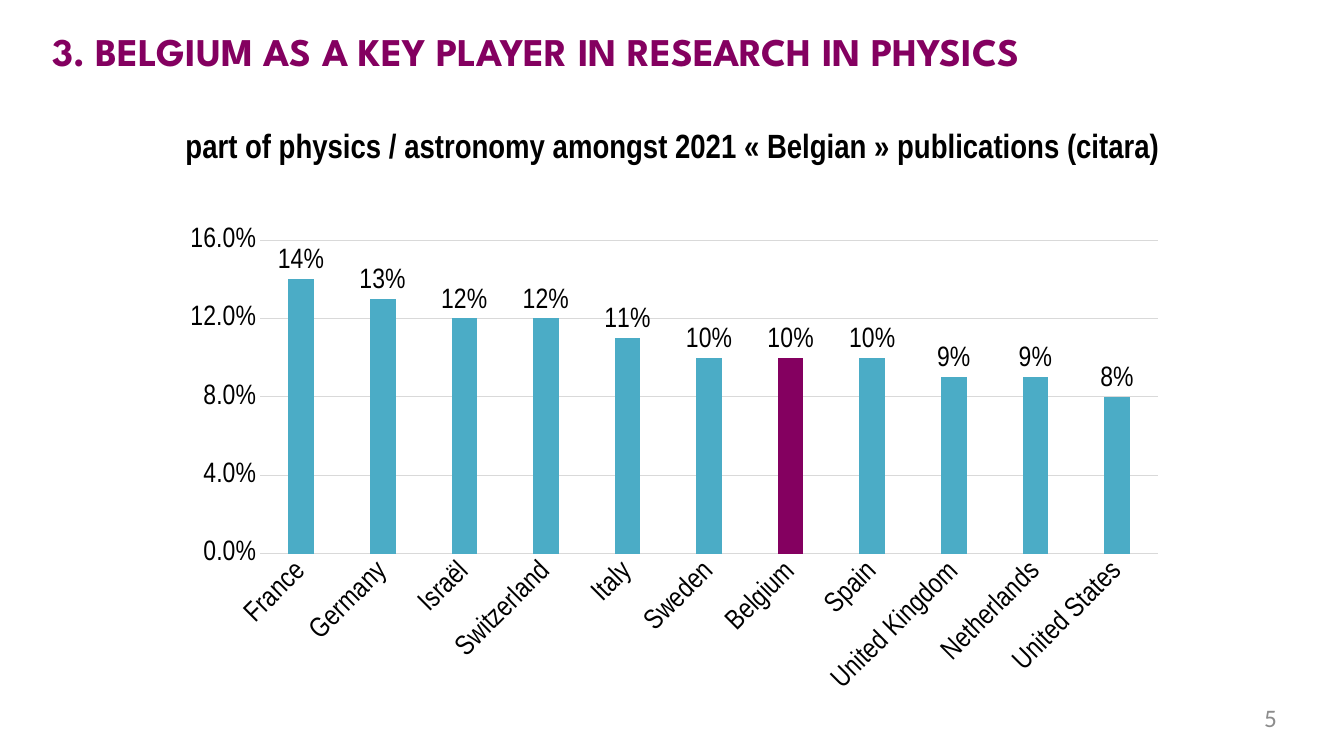
import dataclasses

import pptx
import pptx.chart.data
import pptx.dml.color
import pptx.enum.chart
import pptx.enum.text
import pptx.util

Cm = pptx.util.Cm
Pt = pptx.util.Pt
Align = pptx.enum.text.PP_ALIGN


def shade(code):
    return pptx.dml.color.RGBColor.from_string(code)


@dataclasses.dataclass(frozen=True)
class Theme:
    plum: str = "840060"
    teal: str = "4BACC6"
    ink: str = "000000"
    gray: str = "8C8C8C"
    rule: str = "D9D9D9"
    head: str = "League Spartan"
    body: str = "Arial Narrow"
    foot: str = "Calibri"
    head_size: int = 28
    sub_size: int = 24
    chart_size: int = 20
    foot_size: int = 18


class Page:
    def __init__(self, slide, theme):
        self.slide = slide
        self.theme = theme

    def style(self, font, name, size, color, bold=False):
        font.name = name
        font.size = Pt(size)
        font.bold = bold
        font.color.rgb = shade(color)

    def text(self, words, place, look, align=Align.LEFT, inset=True):
        """Place one line of text; look is (font, size, colour, bold)."""
        box = self.slide.shapes.add_textbox(*map(Cm, place))
        frame = box.text_frame
        frame.word_wrap = True
        frame.auto_size = pptx.enum.text.MSO_AUTO_SIZE.SHAPE_TO_FIT_TEXT
        if not inset:
            frame.margin_left = frame.margin_right = 0
            frame.margin_top = frame.margin_bottom = 0
        para = frame.paragraphs[0]
        para.alignment = align
        run = para.add_run()
        run.text = words
        self.style(run.font, *look)

    def rule(self, line):
        line.color.rgb = shade(self.theme.rule)
        line.width = Pt(0.75)

    def chart(self, shares, accent, place):
        """Draw a column chart of shares with the accent column in plum."""
        theme = self.theme
        kinds = pptx.enum.chart
        look = (theme.body, theme.chart_size, theme.ink)
        data = pptx.chart.data.CategoryChartData(number_format="0%")
        data.categories = list(shares)
        data.add_series("Series 1", list(shares.values()))
        frame = self.slide.shapes.add_chart(
            kinds.XL_CHART_TYPE.COLUMN_CLUSTERED, *map(Cm, place), data)
        chart = frame.chart
        chart.has_legend = False
        chart.has_title = False
        self.style(chart.font, *look)

        base, scale = chart.category_axis, chart.value_axis
        for axis in (base, scale):
            axis.major_tick_mark = kinds.XL_TICK_MARK.NONE
            axis.minor_tick_mark = kinds.XL_TICK_MARK.NONE
            self.style(axis.tick_labels.font, *look)
        self.rule(base.format.line)
        base._element.txPr.bodyPr.set("rot", "-2700000")
        scale.format.line.fill.background()
        scale.minimum_scale = 0
        scale.maximum_scale = 0.16
        scale.major_unit = 0.04
        scale.has_major_gridlines = True
        self.rule(scale.major_gridlines.format.line)
        scale.tick_labels.number_format = "0.0%"
        scale.tick_labels.number_format_is_linked = False

        plot = chart.plots[0]
        plot.vary_by_categories = False
        plot.gap_width = 219
        plot.overlap = -27
        bars = plot.series[0]
        bars.invert_if_negative = False
        point = bars.points[list(shares).index(accent)]
        for part, color in ((bars, theme.teal), (point, theme.plum)):
            part.format.fill.solid()
            part.format.fill.fore_color.rgb = shade(color)
        labels = bars.data_labels
        labels.show_value = True
        labels.position = kinds.XL_LABEL_POSITION.OUTSIDE_END
        labels.number_format = "0%"
        labels.number_format_is_linked = False
        self.style(labels.font, *look)


def main():
    deck = pptx.Presentation()
    deck.slide_width = Cm(33.87)
    deck.slide_height = Cm(19.05)
    theme = Theme()
    page = Page(deck.slides.add_slide(deck.slide_layouts[6]), theme)
    shares = {
        "France": 0.14, "Germany": 0.13, "Israël": 0.12,
        "Switzerland": 0.12, "Italy": 0.11, "Sweden": 0.1,
        "Belgium": 0.1, "Spain": 0.1, "United Kingdom": 0.09,
        "Netherlands": 0.09, "United States": 0.08,
    }

    page.text("5", (24.38, 17.7, 7.8, 0.97),
              (theme.foot, theme.foot_size, theme.gray),
              Align.RIGHT, inset=False)
    page.text("3. BELGIUM AS A KEY PLAYER IN RESEARCH IN PHYSICS",
              (1.07, 0.56, 31.75, 1.45),
              (theme.head, theme.head_size, theme.plum, True))
    page.chart(shares, "Belgium", (4.29, 5.46, 25.4, 12.27))
    page.text("part of physics / astronomy amongst 2021 "
              "« Belgian » publications (citara)",
              (3.61, 3.02, 26.67, 1.27),
              (theme.body, theme.sub_size, theme.ink, True), Align.CENTER)
    deck.save("out.pptx")


if __name__ == "__main__":
    main()
